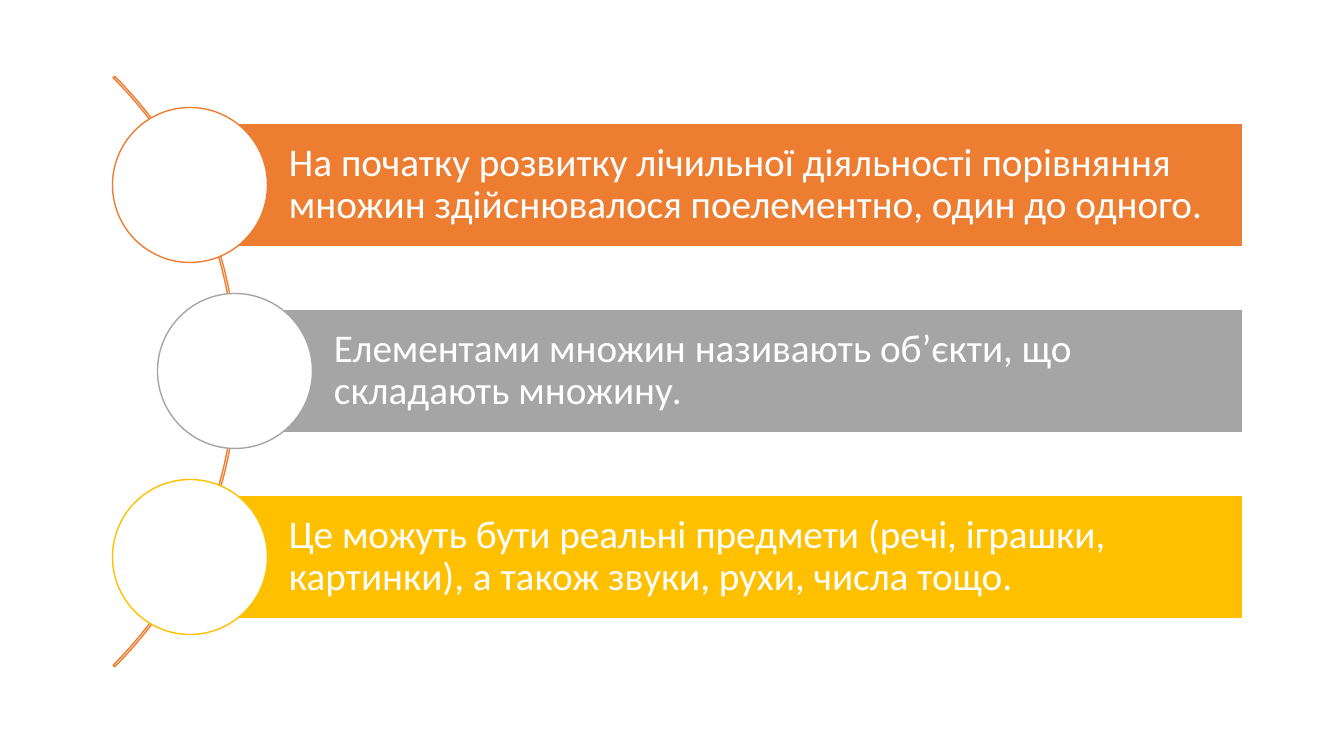
"""Build a slide with three statements about sets arranged along an arc."""
import pptx
import pptx.util
from pptx.dml.color import RGBColor
from pptx.enum.shapes import MSO_SHAPE
from pptx.enum.text import MSO_ANCHOR, PP_ALIGN

PX = 914400 / 100.8
WHITE = "FFFFFF"
ORANGE = "ED7D31"
BAR_RIGHT, BAR_HEIGHT = 1243, 124
CIRCLE_SIZE = 155
FIRST_CENTER, ROW_STEP = 185, 186


def px(length):
    return pptx.util.Emu(round(length * PX))


def add_shape(kind, left, top, width, height, fill, line):
    shape = page.shapes.add_shape(kind, px(left), px(top), px(width), px(height))
    shape.shadow.inherit = False
    if fill:
        shape.fill.solid()
        shape.fill.fore_color.rgb = RGBColor.from_string(fill)
    else:
        shape.fill.background()
    shape.line.color.rgb = RGBColor.from_string(line)
    shape.line.width = pptx.util.Pt(1)
    return shape


deck = pptx.Presentation()
deck.slide_width = px(1344)
deck.slide_height = px(756)
page = deck.slides.add_slide(deck.slide_layouts[6])

arc = add_shape(MSO_SHAPE.BLOCK_ARC, -598, -46, 835, 835, None, ORANGE)
for index, value in enumerate((189, 27, 0.0026)):
    arc.adjustments[index] = value

statements = [
    (190, ORANGE, "На початку розвитку лічильної діяльності порівняння множин "
                  "здійснювалося поелементно, один до одного."),
    (235, "A5A5A5", "Елементами множин називають об’єкти, що складають множину."),
    (190, "FFC000", "Це можуть бути реальні предмети (речі, іграшки, картинки), "
                    "а також звуки, рухи, числа тощо."),
]

for row, (left, color, statement) in enumerate(statements):
    center = FIRST_CENTER + row * ROW_STEP
    bar = add_shape(MSO_SHAPE.RECTANGLE, left, center - BAR_HEIGHT / 2,
                    BAR_RIGHT - left, BAR_HEIGHT, color, WHITE)
    frame = bar.text_frame
    frame.word_wrap = True
    frame.vertical_anchor = MSO_ANCHOR.MIDDLE
    frame.margin_left = px(99)
    frame.margin_top = frame.margin_right = frame.margin_bottom = px(8)
    frame.text = statement
    para = frame.paragraphs[0]
    para.alignment = PP_ALIGN.LEFT
    para.line_spacing = 0.9
    para.font.name = "Calibri"
    para.font.size = pptx.util.Pt(28)
    para.font.color.rgb = RGBColor.from_string(WHITE)

    add_shape(MSO_SHAPE.OVAL, left - CIRCLE_SIZE / 2, center - CIRCLE_SIZE / 2,
              CIRCLE_SIZE, CIRCLE_SIZE, WHITE, color)

deck.save("out.pptx")
